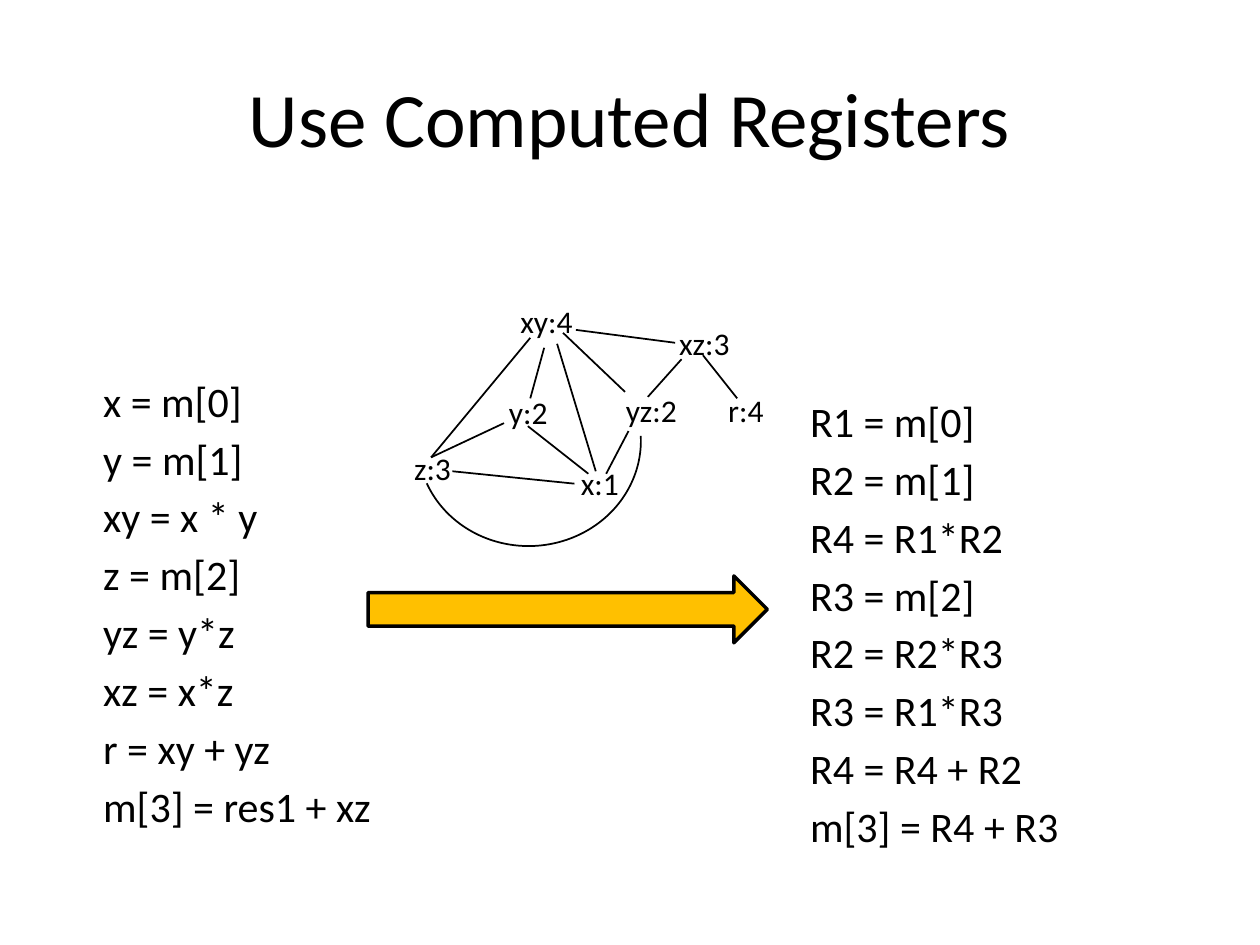
from lxml.etree import SubElement
from pptx import Presentation
from pptx.dml.color import RGBColor
from pptx.enum.shapes import MSO_CONNECTOR, MSO_SHAPE
from pptx.enum.text import MSO_ANCHOR, PP_ALIGN
from pptx.oxml.ns import qn
from pptx.util import Cm, Pt

TITLE = "Use Computed Registers"
BLACK, GOLD = "000000", "FFC000"

# Positions and sizes are in centimetres.
PROGRAMS = [
    ((1.83, 7.44), ["x = m[0]", "y = m[1]", "xy = x * y", "z = m[2]",
                    "yz = y*z", "xz = x*z", "r = xy + yz", "m[3] = res1 + xz"]),
    ((16.08, 7.85), ["R1 = m[0]", "R2 = m[1]", "R4 = R1*R2", "R3 = m[2]",
                     "R2 = R2*R3", "R3 = R1*R3", "R4 = R4 + R2", "m[3] = R4 + R3"]),
]
PROGRAM_SIZE = (8.89, 9.96)

NODES = [  # label, left, top, width
    ("y:2", 10.01, 7.8, 1.32),
    ("yz:2", 12.37, 7.75, 1.57),
    ("x:1", 11.46, 9.22, 1.32),
    ("z:3", 8.1, 8.92, 1.27),
    ("xz:3", 13.44, 6.4, 1.57),
    ("xy:4", 10.24, 5.97, 1.6),
    ("r:4", 14.43, 7.75, 1.24),
]
NODE_HEIGHT = 1.02

EDGES = [  # start x, start y, end x, end y
    (11.23, 6.93, 12.01, 9.5),    # xy - x
    (11.58, 9.75, 9.12, 9.5),     # x - z
    (10.64, 8.59, 11.86, 9.55),   # y - x
    (10.97, 7.01, 10.69, 8.03),   # xy - y
    (8.69, 9.22, 10.16, 8.53),    # z - y
    (10.69, 6.81, 8.69, 9.22),    # xy - z
    (11.35, 6.71, 12.6, 7.9),     # xy - yz
    (12.67, 8.69, 12.22, 9.55),   # yz - x
    (11.61, 6.65, 13.61, 6.91),   # xy - xz
    (13.74, 7.24, 13.06, 8.0),    # xz - yz
    (14.17, 7.16, 14.86, 8.03),   # xz - r
]
ARC = (8.56, 6.65, 4.22, 4.5)     # yz - z
ARROW = (7.42, 11.61, 8.05, 1.35)


def color(value):
    return RGBColor.from_string(value)


def write(frame, lines, size, **paragraph_format):
    frame.text = "\n".join(lines)
    for para in frame.paragraphs:
        for name, value in paragraph_format.items():
            setattr(para, name, value)
        for span in para.runs:
            for name, value in {"name": "Calibri", "size": Pt(size)}.items():
                setattr(span.font, name, value)
            span.font.color.rgb = color(BLACK)


def add_text(page, place, lines, size, wrap, **paragraph_format):
    box = page.shapes.add_textbox(*map(Cm, place))
    box.text_frame.word_wrap = wrap
    write(box.text_frame, lines, size, **paragraph_format)


def outline(shape, width):
    shape.line.color.rgb = color(BLACK)
    shape.line.width = Pt(width)


def add_outlined(page, kind, place, width):
    shape = page.shapes.add_shape(kind, *map(Cm, place))
    shape.shadow.inherit = False
    outline(shape, width)
    return shape


def main():
    deck = Presentation()
    deck.slide_width, deck.slide_height = Cm(25.4), Cm(19.05)
    page = deck.slides.add_slide(deck.slide_layouts[5])

    title = page.shapes.title
    title.left, title.top, title.width, title.height = map(Cm, (1.27, 0.76, 22.86, 3.18))
    title.text_frame.vertical_anchor = MSO_ANCHOR.MIDDLE
    write(title.text_frame, [TITLE], 44, alignment=PP_ALIGN.CENTER)

    for corner, lines in PROGRAMS:
        add_text(page, corner + PROGRAM_SIZE, lines, 24, True, space_before=Pt(4.25))

    for label, left, top, width in NODES:
        add_text(page, (left, top, width, NODE_HEIGHT), [label], 18, False)

    for ends in EDGES:
        edge = page.shapes.add_connector(MSO_CONNECTOR.STRAIGHT, *map(Cm, ends))
        outline(edge, 1)
        SubElement(edge._element.spPr, qn("a:effectLst"))

    arc = add_outlined(page, MSO_SHAPE.ARC, ARC, 1)
    arc.fill.background()
    arc.rotation = 87.1
    arc.adjustments[0], arc.adjustments[1] = 162, 42.39

    arrow = add_outlined(page, MSO_SHAPE.RIGHT_ARROW, ARROW, 2)
    arrow.fill.solid()
    arrow.fill.fore_color.rgb = color(GOLD)

    deck.save("out.pptx")


if __name__ == "__main__":
    main()
